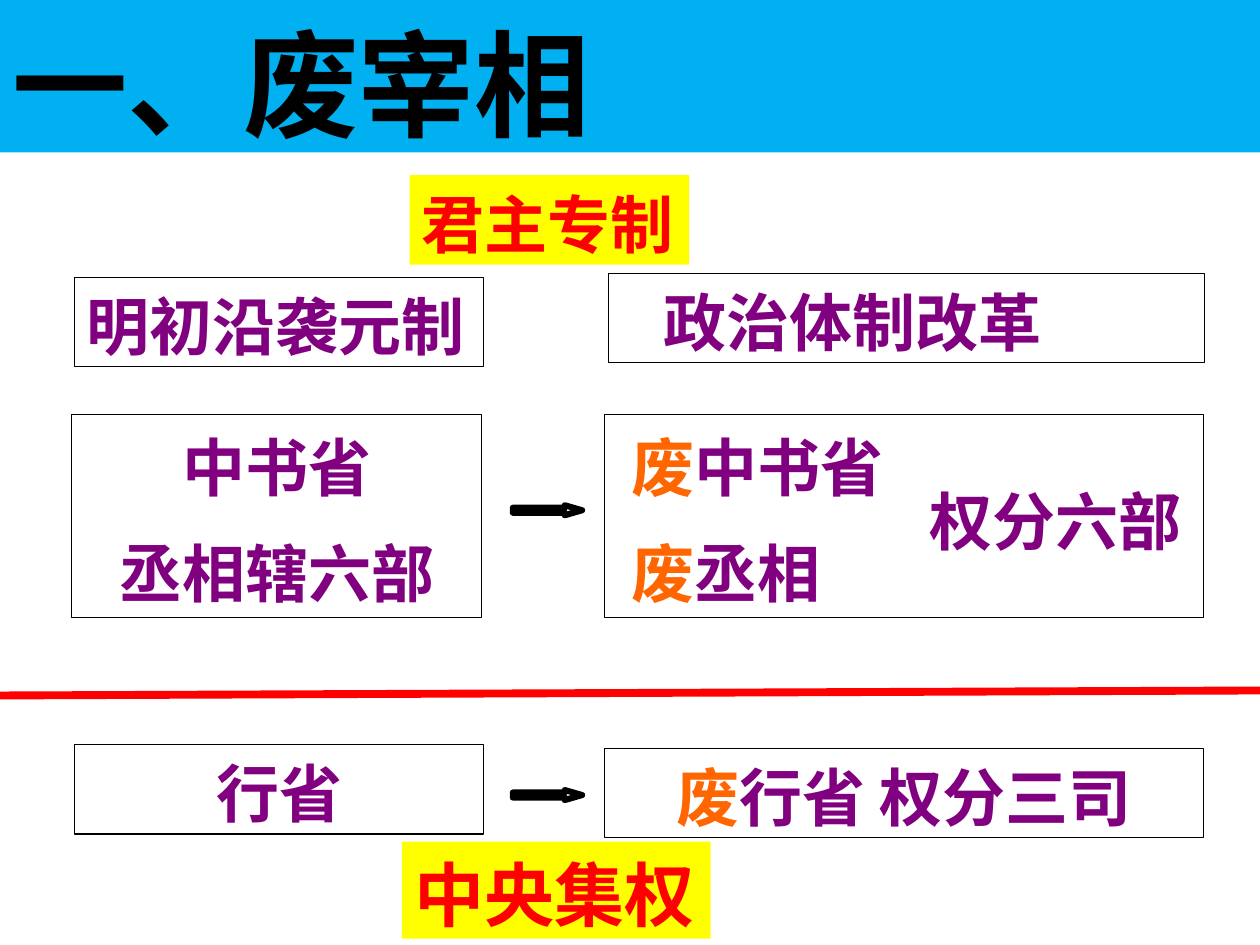
from lxml.etree import SubElement
from pptx import Presentation
from pptx.dml.color import RGBColor
from pptx.enum.shapes import MSO_CONNECTOR, MSO_SHAPE
from pptx.enum.text import MSO_ANCHOR, PP_ALIGN
from pptx.oxml.ns import qn
from pptx.util import Inches, Pt

BLACK = RGBColor(0x00, 0x00, 0x00)
RED = RGBColor(0xFF, 0x00, 0x00)
YELLOW = RGBColor(0xFF, 0xFF, 0x00)
SKY = RGBColor(0x00, 0xB0, 0xF0)
PURPLE = RGBColor(0x80, 0x00, 0x80)
ORANGE = RGBColor(0xFF, 0x66, 0x00)
MINT = RGBColor(0xCC, 0xFF, 0xCC)

SERIF = "Times New Roman"
SANS = "Noto Sans CJK SC"
LEFT, CENTER = PP_ALIGN.LEFT, PP_ALIGN.CENTER


class SlideBuilder:
    line_height = 1.3
    paragraph_gap = Pt(14)

    def __init__(self, slide):
        self.shapes = slide.shapes

    def set_text(self, shape, lines, color, size=36, font=SANS, align=LEFT,
                 indent=0, wrap=True):
        frame = shape.text_frame
        frame.word_wrap = wrap
        frame.vertical_anchor = MSO_ANCHOR.MIDDLE
        frame.margin_left = Inches(0.1 + indent)
        frame.margin_top = frame.margin_bottom = 0
        frame.text = "\n".join(lines)
        for number, paragraph in enumerate(frame.paragraphs):
            paragraph.alignment = align
            paragraph.line_spacing = Pt(round(size * self.line_height))
            if number:
                paragraph.space_before = self.paragraph_gap
            text = paragraph.text
            if text.startswith("废"):
                paragraph.text = text[0]
                paragraph.add_run().text = text[1:]
            for run in paragraph.runs:
                run.font.name = font
                run.font.size = Pt(size)
                run.font.bold = True
                run.font.color.rgb = ORANGE if run.text == "废" else color
                east_asian = SubElement(run.font._element, qn("a:ea"))
                east_asian.set("typeface", SANS)

    def rectangle(self, left, top, width, height):
        shape = self.shapes.add_shape(
            MSO_SHAPE.RECTANGLE, Inches(left), Inches(top),
            Inches(width), Inches(height))
        shape.shadow.inherit = False
        return shape

    def box(self, place, lines, **style):
        shape = self.rectangle(*place)
        shape.fill.background()
        shape.line.color.rgb = BLACK
        shape.line.width = Pt(0.75)
        self.set_text(shape, lines, PURPLE, **style)

    def banner(self, place, text, fill, color, **style):
        shape = self.rectangle(*place)
        shape.fill.solid()
        shape.fill.fore_color.rgb = fill
        shape.line.fill.background()
        self.set_text(shape, [text], color, **style)

    def label(self, place, text):
        shape = self.shapes.add_textbox(*map(Inches, place))
        self.set_text(shape, [text], PURPLE)

    def arrow(self, left, top):
        shape = self.shapes.add_shape(
            MSO_SHAPE.RIGHT_ARROW, Inches(left), Inches(top),
            Inches(0.55), Inches(0.08))
        shape.shadow.inherit = False
        shape.adjustments[0] = 0.5
        shape.adjustments[1] = 1.73
        shape.fill.solid()
        shape.fill.fore_color.rgb = MINT
        shape.line.color.rgb = BLACK
        shape.line.width = Pt(3.5)

    def divider(self, start, end):
        line = self.shapes.add_connector(
            MSO_CONNECTOR.STRAIGHT, *map(Inches, start + end))
        line.line.color.rgb = RED
        line.line.width = Pt(4.5)
        SubElement(line._element.spPr, qn("a:effectLst"))


def main():
    presentation = Presentation()
    presentation.slide_width = Inches(10)
    presentation.slide_height = Inches(7.5)
    builder = SlideBuilder(
        presentation.slides.add_slide(presentation.slide_layouts[6]))

    builder.box((0.59, 2.2, 3.25, 0.71), ["明初沿袭元制"], font=SERIF)
    builder.box((0.57, 3.29, 3.25, 1.61), ["中书省", "丞相辖六部"],
                font=SERIF, align=CENTER)
    builder.box((0.59, 5.91, 3.25, 0.71), ["行省"], font=SERIF, align=CENTER)
    builder.box((4.83, 2.17, 4.73, 0.71), ["政治体制改革"],
                font=SERIF, indent=0.34)
    builder.box((4.8, 5.94, 4.75, 0.71), ["废行省 权分三司"], align=CENTER)
    builder.box((4.8, 3.29, 4.75, 1.61), ["废中书省", "废丞相"], indent=0.11)
    builder.label((7.28, 3.75, 2.44, 0.7), "权分六部")

    for top in (6.27, 4.01):
        builder.arrow(4.07, top)

    builder.banner((0, 0, 10, 1.21), "一、废宰相", SKY, BLACK, size=66)
    builder.divider((0, 5.52), (10, 5.48))
    builder.banner((3.19, 6.68, 2.45, 0.77), "中央集权", YELLOW, RED,
                   size=40, wrap=False)
    builder.banner((3.25, 1.39, 2.22, 0.71), "君主专制", YELLOW, RED,
                   wrap=False)

    presentation.save("out.pptx")


if __name__ == "__main__":
    main()
